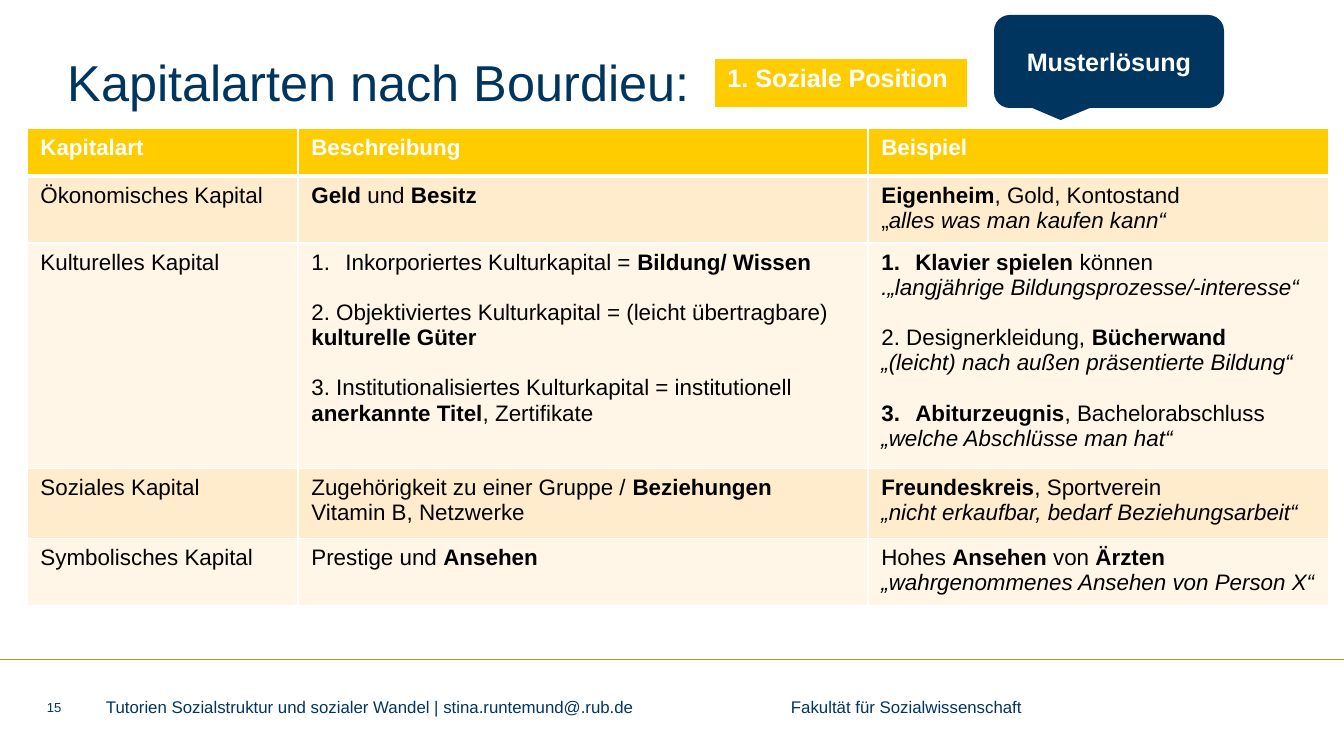
from lxml.etree import SubElement
from pptx import Presentation
from pptx.dml.color import RGBColor
from pptx.enum.shapes import MSO_CONNECTOR, MSO_SHAPE
from pptx.enum.text import MSO_ANCHOR, PP_ALIGN
from pptx.oxml import parse_xml
from pptx.oxml.ns import nsdecls, qn
from pptx.util import Pt

PX = 6804
NAVY, YELLOW, WHITE, BLACK, GREEN = "003560", "FFCC00", "FFFFFF", "000000", "8DAE10"
BANDS = ["FFECCC", "FFF6E7"]
GAP = 13.5

TITLE = "Kapitalarten nach Bourdieu:"
TOPIC = "1. Soziale Position"
CALLOUT = "Musterlösung"
FOOTERS = [
    ("15", 47, 38, 7),
    ("Tutorien Sozialstruktur und sozialer Wandel | stina.runtemund@.rub.de", 106, 600, 9),
    ("Fakultät für Sozialwissenschaft", 791, 300, 9),
]
HEADERS = ["Kapitalart", "Beschreibung", "Beispiel"]
COLUMNS = [271, 570, 461]
ROWS = [48, 63, 219, 70, 63]


def line(*runs, number=None, gap=False):
    return {"runs": runs, "number": number, "gap": gap}


def plain(text):
    return text, ""


def bold(text):
    return text, "b"


def italic(text):
    return text, "i"


CAPITALS = [
    [
        [line(plain("Ökonomisches Kapital"))],
        [line(bold("Geld"), plain(" und "), bold("Besitz"))],
        [line(bold("Eigenheim"), plain(", Gold, Kontostand")),
         line(plain("„"), italic("alles was man kaufen kann“"))],
    ],
    [
        [line(plain("Kulturelles Kapital"))],
        [line(plain("Inkorporiertes Kulturkapital = "), bold("Bildung/ Wissen"), number=1),
         line(plain("2. Objektiviertes Kulturkapital = (leicht übertragbare) "),
              bold("kulturelle Güter"), gap=True),
         line(plain("3. Institutionalisiertes Kulturkapital = institutionell "),
              bold("anerkannte Titel"), plain(", Zertifikate"), gap=True)],
        [line(bold("Klavier spielen "), plain("können"), number=1),
         line(italic(".„langjährige Bildungsprozesse/-interesse“")),
         line(plain("2. Designerkleidung, "), bold("Bücherwand"), gap=True),
         line(italic("„(leicht) nach außen präsentierte Bildung“")),
         line(bold("Abiturzeugnis"), plain(", Bachelorabschluss"), number=3, gap=True),
         line(italic("„welche Abschlüsse man hat“"))],
    ],
    [
        [line(plain("Soziales Kapital"))],
        [line(plain("Zugehörigkeit zu einer Gruppe / "), bold("Beziehungen")),
         line(plain("Vitamin B, Netzwerke"))],
        [line(bold("Freundeskreis"), plain(", Sportverein")),
         line(italic("„nicht erkaufbar, bedarf Beziehungsarbeit“"))],
    ],
    [
        [line(plain("Symbolisches Kapital"))],
        [line(plain("Prestige und "), bold("Ansehen"))],
        [line(plain("Hohes "), bold("Ansehen"), plain(" von "), bold("Ärzten")),
         line(italic("„wahrgenommenes Ansehen von Person X“"))],
    ],
]


def px(*lengths):
    return [length * PX for length in lengths]


def color(value):
    return RGBColor.from_string(value)


def fill(target, value):
    target.fill.solid()
    target.fill.fore_color.rgb = color(value)


def style(run, size, value, flags=""):
    run.font.name = "Arial"
    run.font.size = Pt(size)
    run.font.color.rgb = color(value)
    run.font.bold = "b" in flags
    run.font.italic = "i" in flags


def write(frame, lines, size, value):
    for index, content in enumerate(lines):
        paragraph = frame.paragraphs[0] if index == 0 else frame.add_paragraph()
        if content["gap"]:
            paragraph.space_before = Pt(GAP)
        if content["number"]:
            properties = paragraph._p.get_or_add_pPr()
            properties.set("marL", str(34 * PX))
            properties.set("indent", str(-34 * PX))
            SubElement(properties, qn("a:buFont"), typeface="+mj-lt")
            SubElement(properties, qn("a:buAutoNum"), type="arabicPeriod",
                       startAt=str(content["number"]))
        for text, flags in content["runs"]:
            run = paragraph.add_run()
            run.text = text
            style(run, size, value, flags)


def add_text(slide, text, box, size, anchor):
    frame = slide.shapes.add_textbox(*px(*box)).text_frame
    frame.word_wrap = True
    frame.vertical_anchor = anchor
    frame.margin_left = frame.margin_top = frame.margin_right = frame.margin_bottom = 0
    write(frame, [line(plain(text))], size, NAVY)
    return frame


def set_borders(cell, top, bottom):
    properties = cell._tc.get_or_add_tcPr()
    for index, (side, width) in enumerate(zip("LRTB", (1, 1, top, bottom))):
        properties.insert(index, parse_xml(
            f'<a:ln{side} {nsdecls("a")} w="{Pt(width)}"><a:solidFill>'
            f'<a:srgbClr val="{WHITE}"/></a:solidFill></a:ln{side}>'))


def add_table(slide, left, top, columns, rows, cells, size):
    box = px(left, top, sum(columns), sum(rows))
    table = slide.shapes.add_table(len(rows), len(columns), *box).table
    for column, width in zip(table.columns, px(*columns)):
        column.width = width
    for index, (row, height) in enumerate(zip(table.rows, px(*rows))):
        row.height = height
        header = index == 0
        for cell, lines in zip(row.cells, cells[index]):
            write(cell.text_frame, lines, size, WHITE if header else BLACK)
            fill(cell, YELLOW if header else BANDS[(index - 1) % 2])
            set_borders(cell, 3 if index == 1 else 1, 3 if header else 1)


def main():
    presentation = Presentation()
    presentation.slide_width, presentation.slide_height = px(1344, 756)
    slide = presentation.slides.add_slide(presentation.slide_layouts[6])

    rule = slide.shapes.add_connector(MSO_CONNECTOR.STRAIGHT, *px(0, 659, 1344, 659))
    rule.line.color.rgb = color(GREEN)
    rule.line.width = Pt(0.5)
    SubElement(rule._element.spPr, qn("a:effectLst"))

    title = add_text(slide, TITLE, (68, 58, 1112, 69), 27, MSO_ANCHOR.TOP)
    title.paragraphs[0].line_spacing = 0.9
    for text, left, width, size in FOOTERS:
        add_text(slide, text, (left, 699, width, 16), size, MSO_ANCHOR.MIDDLE)

    add_table(slide, 714, 58, [254], [52], [[[line(bold(TOPIC))]]], 13.5)
    header = [[line(bold(text))] for text in HEADERS]
    add_table(slide, 27, 128, COLUMNS, ROWS, [header] + CAPITALS, 12)

    callout = slide.shapes.add_shape(MSO_SHAPE.ROUNDED_RECTANGULAR_CALLOUT,
                                     *px(994, 15, 230, 93))
    for index, value in enumerate((-0.21, 0.63, 0.17)):
        callout.adjustments[index] = value
    callout.shadow.inherit = False
    fill(callout, NAVY)
    callout.line.fill.background()
    callout.text_frame.vertical_anchor = MSO_ANCHOR.MIDDLE
    write(callout.text_frame, [line(bold(CALLOUT))], 13.5, WHITE)
    callout.text_frame.paragraphs[0].alignment = PP_ALIGN.CENTER

    presentation.save("out.pptx")


if __name__ == "__main__":
    main()
